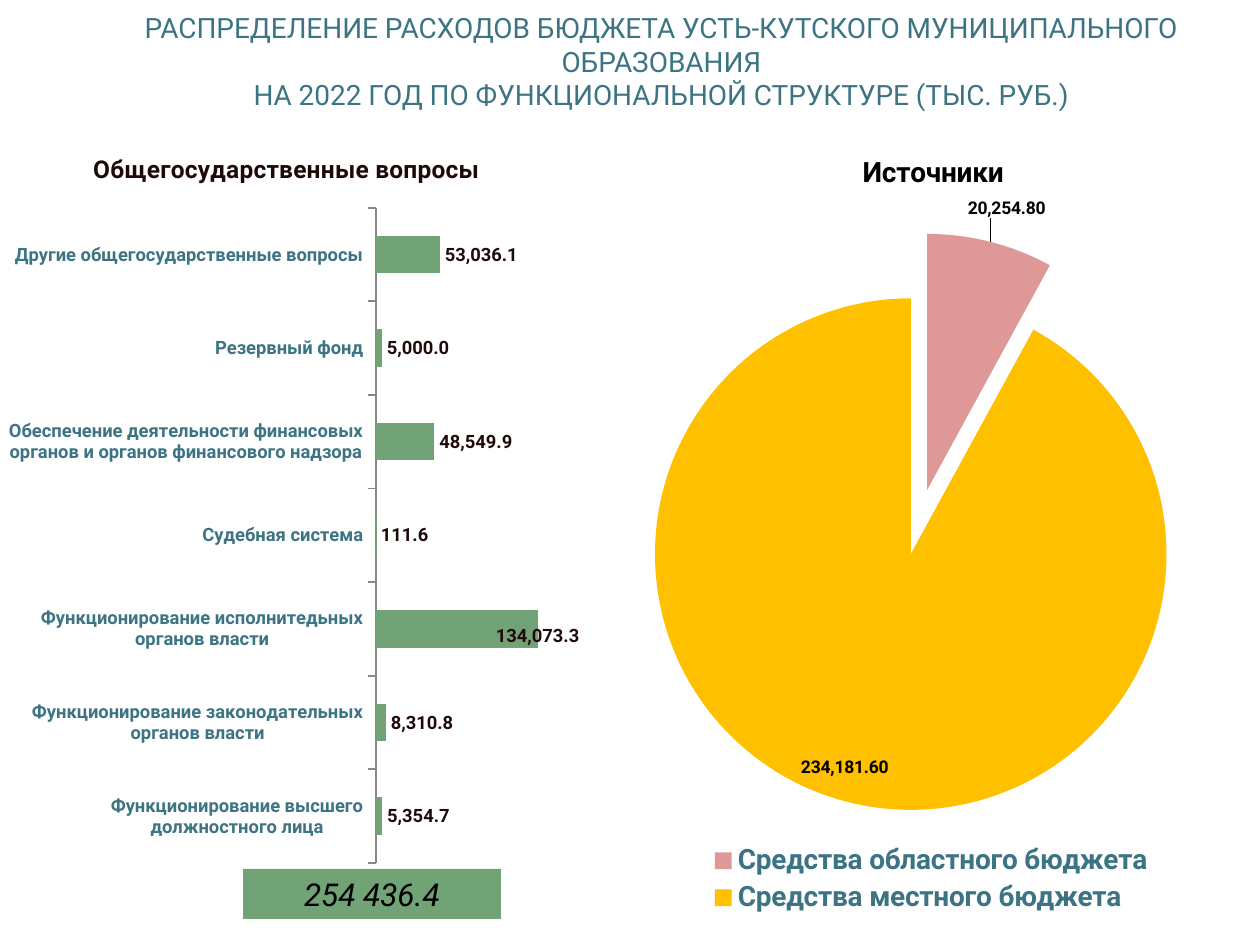
from lxml import etree
from pptx import Presentation
from pptx.chart.data import CategoryChartData
from pptx.dml.color import RGBColor
from pptx.enum.chart import (XL_CHART_TYPE, XL_LABEL_POSITION, XL_LEGEND_POSITION,
                             XL_TICK_MARK)
from pptx.enum.shapes import MSO_SHAPE
from pptx.enum.text import MSO_ANCHOR, PP_ALIGN
from pptx.oxml.ns import qn
from pptx.util import Pt

BAR, PIE = XL_CHART_TYPE.BAR_CLUSTERED, XL_CHART_TYPE.PIE
OUTSIDE_END, BEST_FIT = XL_LABEL_POSITION.OUTSIDE_END, XL_LABEL_POSITION.BEST_FIT
LEGEND_BOTTOM = XL_LEGEND_POSITION.BOTTOM
TICK_OUTSIDE, TICK_NONE = XL_TICK_MARK.OUTSIDE, XL_TICK_MARK.NONE
RECTANGLE = MSO_SHAPE.RECTANGLE
MIDDLE, CENTER = MSO_ANCHOR.MIDDLE, PP_ALIGN.CENTER

FONT = "Roboto"
TEAL = RGBColor(0x3C, 0x74, 0x83)
GREEN = RGBColor(0x72, 0xA3, 0x76)
PINK = RGBColor(0xDE, 0x98, 0x98)
AMBER = RGBColor(0xFF, 0xC0, 0x00)
DARK = RGBColor(0x1F, 0x0A, 0x0A)
GRAY = RGBColor(0x87, 0x87, 0x87)
BLACK = RGBColor(0, 0, 0)

HEADING = ("РАСПРЕДЕЛЕНИЕ РАСХОДОВ БЮДЖЕТА УСТЬ-КУТСКОГО МУНИЦИПАЛЬНОГО ОБРАЗОВАНИЯ\v"
           "НА 2022 ГОД ПО ФУНКЦИОНАЛЬНОЙ СТРУКТУРЕ (ТЫС. РУБ.)")
EXPENSES = {
    "Функционирование высшего должностного лица": 5354.7,
    "Функционирование законодательных органов власти": 8310.8,
    "Функционирование исполнитедьных органов власти": 134073.3,
    "Судебная система": 111.6,
    "Обеспечение деятельности финансовых органов и органов финансового надзора": 48549.9,
    "Резервный фонд": 5000,
    "Другие общегосударственные вопросы": 53036.1,
}
SOURCES = {
    "Средства областного бюджета": 20254.8,
    "Средства местного бюджета": 234181.6,
}


def px(length):
    return round(length * 914400 / 126)


def box(*lengths):
    return [px(length) for length in lengths]


def style_font(font, size, color, bold=False, italic=False):
    font.name, font.size = FONT, Pt(size)
    font.bold, font.italic = bold, italic
    font.color.rgb = color


def fill_solid(target, color):
    target.fill.solid()
    target.fill.fore_color.rgb = color


def write_centered(shape, text, size, color, italic=False):
    frame = shape.text_frame
    frame.word_wrap = True
    frame.vertical_anchor = MIDDLE
    frame.text = text
    paragraph = frame.paragraphs[0]
    paragraph.alignment = CENTER
    for run in paragraph.runs:
        style_font(run.font, size, color, italic=italic)


def make_layout(x, y, w=None, h=None, inner=False, absolute=True):
    """Manual chart layout in fractions of the chart area."""
    settings = [("layoutTarget", "inner")] if inner else []
    if absolute:
        settings += [("xMode", "edge"), ("yMode", "edge")]
    settings += [("x", x), ("y", y), ("w", w), ("h", h)]
    layout = etree.Element(qn("c:layout"))
    manual = etree.SubElement(layout, qn("c:manualLayout"))
    for tag, value in settings:
        if value is not None:
            etree.SubElement(manual, qn("c:" + tag)).set("val", str(value))
    return layout


def place(parent, layout, after=None):
    """Put the layout in its schema position, replacing any earlier one."""
    for old in parent.findall(qn("c:layout")):
        parent.remove(old)
    anchor = parent.find(qn(after)) if after else None
    if anchor is None:
        parent.insert(0, layout)
    else:
        anchor.addnext(layout)


def add_titled_chart(slide, kind, frame, title, values, title_size, title_color,
                     title_at, plot_at):
    data = CategoryChartData()
    data.categories = list(values)
    data.add_series(title, list(values.values()))
    chart = slide.shapes.add_chart(kind, *frame, data).chart
    style_font(chart.font, 18, BLACK)
    chart.has_title = True
    chart.chart_title.include_in_layout = False
    paragraph = chart.chart_title.text_frame.paragraphs[0]
    paragraph.text = title
    style_font(paragraph.runs[0].font, title_size, title_color, bold=True)
    place(chart.chart_title._element, make_layout(*title_at), "c:tx")
    chart.plots[0].vary_by_categories = kind == PIE
    place(chart._chartSpace.chart.plotArea, make_layout(*plot_at, inner=True))
    return chart


def label_values(series, number_format, size, color, position, leaders):
    labels = series.data_labels
    labels.show_value = True
    labels.number_format = number_format
    labels.number_format_is_linked = False
    labels.position = position
    style_font(labels.font, size, color, bold=True)
    for switch in series._element.iter(qn("c:showLeaderLines")):
        switch.set("val", str(int(leaders)))


def move_label(series, index, dx, dy, number_format, size, color):
    label = series.points[index].data_label
    style_font(label.font, size, color, bold=True)
    label.position = OUTSIDE_END
    element = series._element.xpath(f"c:dLbls/c:dLbl[c:idx/@val='{index}']")[0]
    layout = make_layout(dx, dy, absolute=False)
    place(element, layout, "c:idx")
    number = etree.Element(qn("c:numFmt"), formatCode=number_format, sourceLinked="0")
    layout.addnext(number)


def add_expense_bars(slide):
    chart = add_titled_chart(slide, BAR, box(-5, 125, 586, 753),
                             "Общегосударственные вопросы", EXPENSES, 14, DARK,
                             (0.16, 0.03), (0.65, 0.11, 0.33, 0.87))
    chart.has_legend = False
    chart.plots[0].gap_width = 150

    categories, amounts = chart.category_axis, chart.value_axis
    categories.major_tick_mark = TICK_OUTSIDE
    categories.minor_tick_mark = TICK_NONE
    categories.format.line.color.rgb = GRAY
    categories.format.line.width = Pt(1)
    style_font(categories.tick_labels.font, 10.5, TEAL, bold=True)
    amounts.has_major_gridlines = False
    amounts.minimum_scale, amounts.maximum_scale = 0, 160000
    amounts.visible = False

    series = chart.plots[0].series[0]
    fill_solid(series.format, GREEN)
    label_values(series, "#,##0.0", 10.5, DARK, OUTSIDE_END, leaders=False)
    move_label(series, 2, -0.08, 0.01, "#,##0.0", 10.5, DARK)


def add_source_pie(slide):
    chart = add_titled_chart(slide, PIE, box(630, 125, 615, 794),
                             "Источники", SOURCES, 16, BLACK,
                             (0.37, 0.03), (0, 0, 0.94, 1))
    series = chart.plots[0].series[0]
    for index, color in enumerate((PINK, AMBER)):
        fill_solid(series.points[index].format, color)
    # Exploding the whole series makes the pie shrink to keep its slices in the plot
    explosion = etree.Element(qn("c:explosion"), val="13")
    series._element.find(qn("c:dPt")).addprevious(explosion)
    label_values(series, "#,##0.00", 10, BLACK, BEST_FIT, leaders=True)
    move_label(series, 0, -0.04, -0.02, "#,##0.00", 10, BLACK)

    chart.has_legend = True
    legend = chart.legend
    legend.position = LEGEND_BOTTOM
    legend.include_in_layout = False
    style_font(legend.font, 16, TEAL, bold=True)
    place(legend._element, make_layout(0.12, 0.9, 0.74, 0.1), "c:legendPos")


def add_total(slide):
    total = slide.shapes.add_shape(RECTANGLE, *box(243, 869, 258, 50))
    total.shadow.inherit = False
    fill_solid(total, GREEN)
    total.line.fill.background()
    write_centered(total, "254 436.4", 18, BLACK, italic=True)


def main():
    presentation = Presentation()
    presentation.slide_width, presentation.slide_height = box(1260, 945)
    slide = presentation.slides.add_slide(presentation.slide_layouts[6])

    # Heading
    heading = slide.shapes.add_textbox(*box(63, 16, 1197, 90))
    write_centered(heading, HEADING, 16, TEAL)

    # Expenses with their total, then the funding sources
    add_expense_bars(slide)
    add_total(slide)
    add_source_pie(slide)
    presentation.save("out.pptx")


if __name__ == "__main__":
    main()
